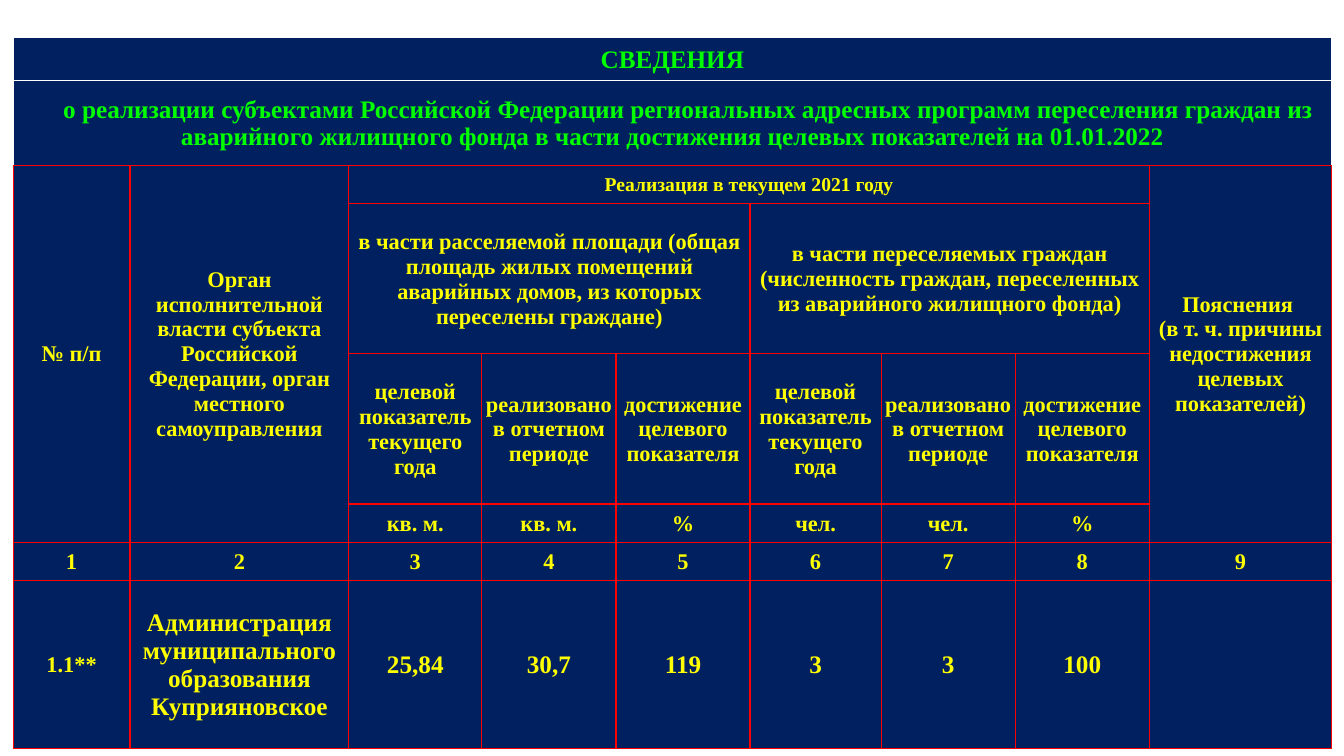
from dataclasses import dataclass
from lxml import etree
from pptx import Presentation
from pptx.dml.color import RGBColor
from pptx.enum.text import MSO_ANCHOR, PP_ALIGN
from pptx.oxml.ns import qn
from pptx.util import Inches, Pt

MIDDLE = MSO_ANCHOR.MIDDLE
CENTER = PP_ALIGN.CENTER
BLANK_LAYOUT = 6


@dataclass(frozen=True)
class Theme:
    """Colours, font and type sizes of the slide."""
    font: str = "Times New Roman"
    navy: str = "002060"
    green: str = "00FF00"
    yellow: str = "FFFF00"
    red: str = "FF0000"
    white: str = "FFFFFF"
    large: int = 18
    body: int = 16
    small: int = 14
    border: int = 1


THEME = Theme()
COLUMN_WIDTHS = [1.16, 2.17, 1.32, 1.33, 1.33, 1.3, 1.33, 1.33, 1.81]
ROW_HEIGHTS = [0.43, 0.84, 0.38, 1.49, 1.49, 0.38, 0.38, 1.67]
TITLE_ROWS = 2
TITLE_INDENT = 0.31
MEASURES = [
    "целевой показатель текущего года",
    "реализовано в отчетном периоде",
    "достижение целевого показателя",
]
UNITS = ["кв. м.", "кв. м.", "%", "чел.", "чел.", "%"]
VALUES = ["25,84", "30,7", "119", "3", "3", "100", ""]
TITLES = [
    "СВЕДЕНИЯ",
    "о реализации субъектами Российской Федерации региональных адресных программ "
    "переселения граждан из аварийного жилищного фонда в части достижения целевых "
    "показателей на 01.01.2022",
]
HEADINGS = [
    (2, 0, 4, 1, "№ п/п", THEME.body),
    (2, 1, 4, 1, "Орган исполнительной власти субъекта Российской Федерации, "
     "орган местного самоуправления", THEME.body),
    (2, 2, 1, 6, "Реализация в текущем 2021 году", THEME.small),
    (2, 8, 4, 1, "Пояснения \v(в т. ч. причины недостижения целевых показателей)",
     THEME.body),
    (3, 2, 1, 3, "в части расселяемой площади (общая площадь жилых помещений "
     "аварийных домов, из которых переселены граждане)", THEME.body),
    (3, 5, 1, 3, "в части переселяемых граждан (численность граждан, "
     "переселенных из аварийного жилищного фонда)", THEME.body),
]


def style_cell(cell, row):
    """Give a cell its borders, fill, margins and anchor."""
    properties = cell._tc.get_or_add_tcPr()
    for side in ("lnL", "lnR", "lnT", "lnB"):
        is_white = row == 0 or (row < TITLE_ROWS and side != "lnB")
        line = etree.SubElement(properties, qn(f"a:{side}"), w=str(Pt(THEME.border)))
        fill = etree.SubElement(line, qn("a:solidFill"))
        color = THEME.white if is_white else THEME.red
        etree.SubElement(fill, qn("a:srgbClr"), val=color)
    cell.fill.solid()
    cell.fill.fore_color.rgb = RGBColor.from_string(THEME.navy)
    cell.margin_left = cell.margin_right = cell.margin_top = Inches(0.01)
    cell.margin_bottom = 0
    cell.vertical_anchor = MIDDLE


def write_cell(cell, text, size, color=THEME.yellow):
    """Write centred bold text in a cell and return its paragraph."""
    cell.text = text
    paragraph = cell.text_frame.paragraphs[0]
    paragraph.alignment = CENTER
    paragraph.font.name = THEME.font
    paragraph.font.size = Pt(size)
    paragraph.font.bold = True
    paragraph.font.color.rgb = RGBColor.from_string(color)
    return paragraph


def write_titles(table):
    """Fill the two title rows across the full width."""
    last_column = len(COLUMN_WIDTHS) - 1
    for row, title in enumerate(TITLES):
        table.cell(row, 0).merge(table.cell(row, last_column))
        paragraph = write_cell(table.cell(row, 0), title, THEME.large, THEME.green)
    paragraph._p.get_or_add_pPr().set("indent", str(Inches(TITLE_INDENT)))


def write_headings(table):
    """Fill the merged headings, the measures, the units and the column numbers."""
    for row, column, height, width, text, size in HEADINGS:
        cell = table.cell(row, column)
        cell.merge(table.cell(row + height - 1, column + width - 1))
        write_cell(cell, text, size)
    for column, (measure, unit) in enumerate(zip(MEASURES * 2, UNITS), start=2):
        write_cell(table.cell(4, column), measure, THEME.body)
        write_cell(table.cell(5, column), unit, THEME.body)
    for column in range(len(COLUMN_WIDTHS)):
        write_cell(table.cell(6, column), str(column + 1), THEME.body)


def write_results(table):
    """Fill the row of the municipality."""
    write_cell(table.cell(7, 0), "1.1**", THEME.body)
    results = ["Администрация муниципального образования Куприяновское", *VALUES]
    for column, text in enumerate(results, start=1):
        write_cell(table.cell(7, column), text, THEME.large)


def add_report_table(slide, left, top):
    """Place the whole report table with its top left corner at the given point."""
    frame = slide.shapes.add_table(
        len(ROW_HEIGHTS), len(COLUMN_WIDTHS), Inches(left), Inches(top),
        Inches(sum(COLUMN_WIDTHS)), Inches(sum(ROW_HEIGHTS)))
    table = frame.table
    table.first_row = table.horz_banding = False
    for column, width in zip(table.columns, COLUMN_WIDTHS):
        column.width = Inches(width)
    for index, height in enumerate(ROW_HEIGHTS):
        table.rows[index].height = Inches(height)
        for cell in table.rows[index].cells:
            style_cell(cell, index)
    write_titles(table)
    write_headings(table)
    write_results(table)


def main():
    """Build the slide and save it."""
    presentation = Presentation()
    presentation.slide_width = Inches(13.33)
    presentation.slide_height = Inches(7.5)
    slide = presentation.slides.add_slide(presentation.slide_layouts[BLANK_LAYOUT])
    add_report_table(slide, 0.13, 0.37)
    presentation.save("out.pptx")


if __name__ == "__main__":
    main()
